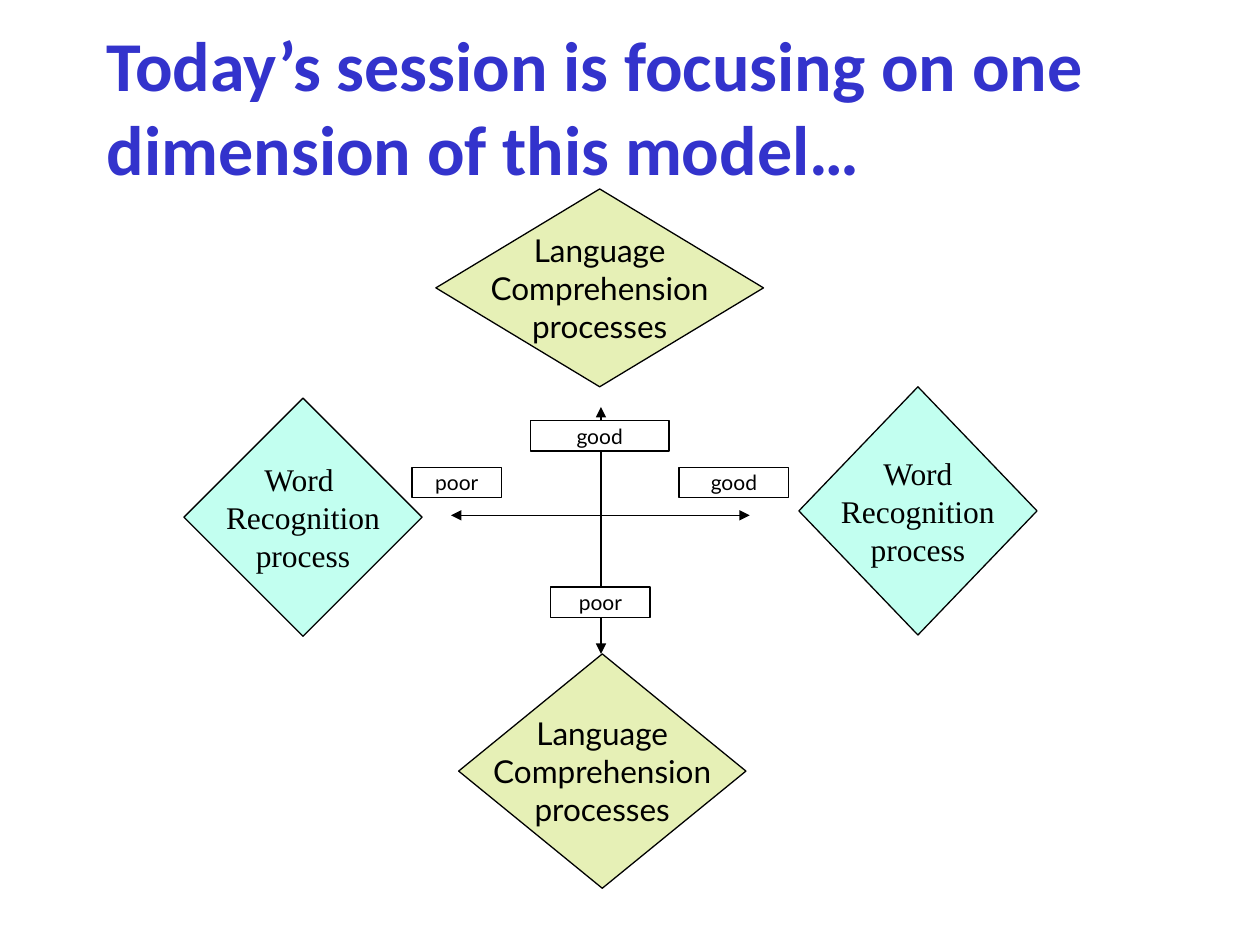
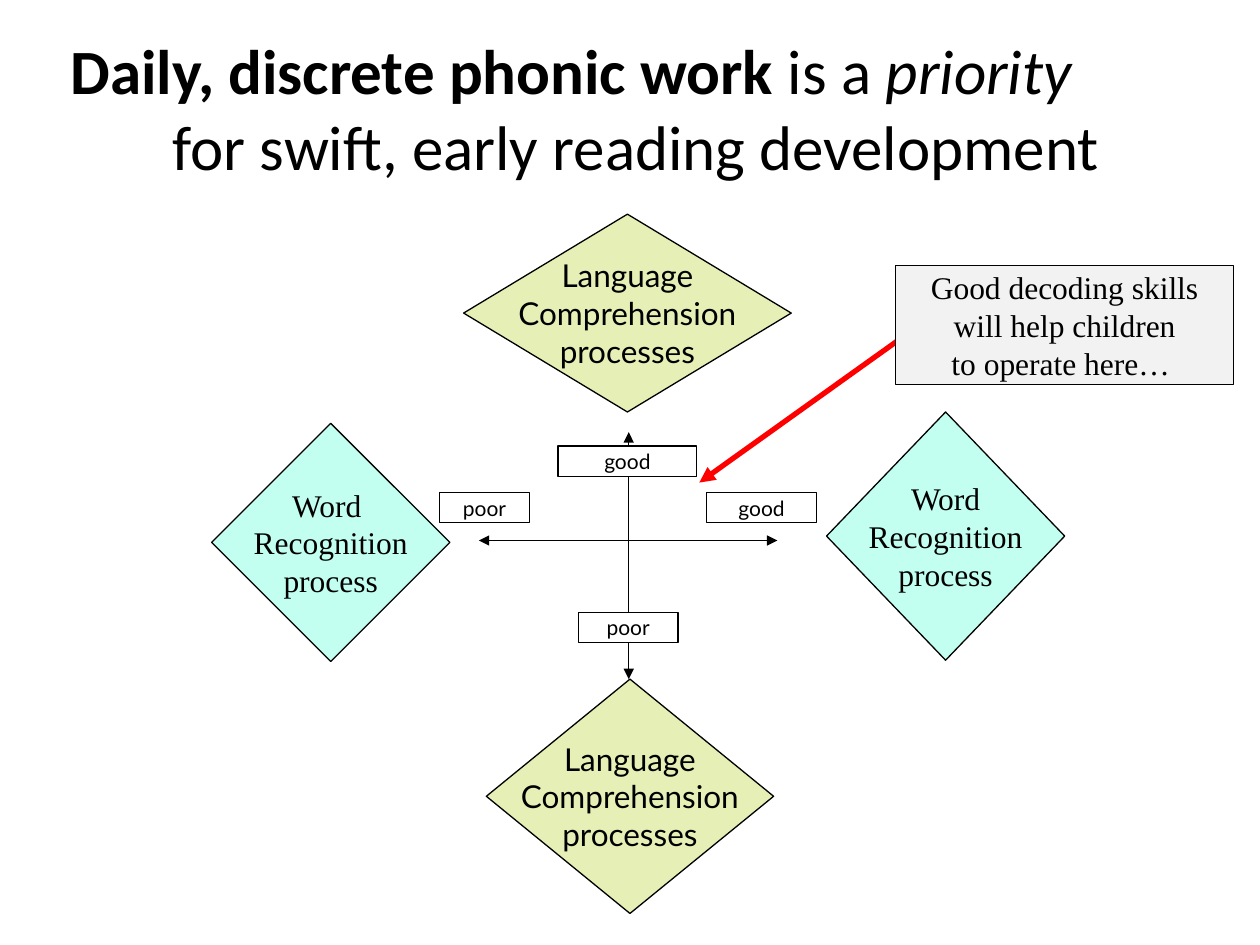
from lxml import etree
from pptx import Presentation
from pptx.dml.color import RGBColor
from pptx.enum.shapes import MSO_CONNECTOR, MSO_SHAPE
from pptx.enum.text import MSO_ANCHOR, PP_ALIGN
from pptx.oxml.ns import qn
from pptx.util import Inches, Pt

BLACK = RGBColor(0x00, 0x00, 0x00)
WHITE = RGBColor(0xFF, 0xFF, 0xFF)
BLUE = RGBColor(0x33, 0x33, 0xCC)
RED = RGBColor(0xFF, 0x00, 0x00)
GREY = RGBColor(0xF2, 0xF2, 0xF2)
LIME = RGBColor(0xE6, 0xF0, 0xB6)
AQUA = RGBColor(0xC2, 0xFF, 0xF0)

TITLE_FONT, LANGUAGE_FONT, WORD_FONT = "Calibri", "Lato", "Times New Roman"

LANGUAGE = ["Language", "Comprehension", "processes"]
WORD = ["Word", "Recognition", "process"]
WORD_LEFT = ["Word ", "Recognition", "process"]

DIAMONDS = [
    (LANGUAGE, LANGUAGE_FONT, LIME, (3.46, 1.5, 2.6, 1.57)),
    (LANGUAGE, LANGUAGE_FONT, LIME, (3.64, 5.19, 2.28, 1.86)),
    (WORD, WORD_FONT, AQUA, (6.34, 3.07, 1.89, 1.97)),
    (WORD_LEFT, WORD_FONT, AQUA, (1.46, 3.16, 1.89, 1.89)),
]
AXES = [((4.77, 3.23), (4.77, 5.19)), ((3.58, 4.09), (5.95, 4.09))]
LABELS = [
    ("good", None, (5.39, 3.71, 0.87, 0.24)),
    ("poor", None, (3.27, 3.71, 0.71, 0.24)),
    ("good", WHITE, (4.21, 3.34, 1.1, 0.24)),
    ("poor", WHITE, (4.37, 4.66, 0.79, 0.24)),
]

FOCUS_TITLE = [[("Today’s session is focusing on one dimension of this model…", "b")]]
PHONICS_TITLE = [
    [("Daily, discrete phonic work ", "b"), ("is a ", ""), ("priority", "i")],
    [("for swift, early reading development", "")],
]
CALLOUT = ["Good decoding skills", "will help children", "to operate here… "]
MODEL_SHIFT = (0.22, 0.2)


def style_run(r, font, size, color, style=""):
    r.font.name, r.font.size, r.font.color.rgb = font, Pt(size), color
    r.font.bold, r.font.italic = "b" in style, "i" in style


def write(sp, lines, font, size, color=BLACK):
    tf = sp.text_frame
    tf.word_wrap = False
    tf.vertical_anchor = MSO_ANCHOR.MIDDLE
    for i, line in enumerate(lines):
        p = tf.paragraphs[0] if i == 0 else tf.add_paragraph()
        p.alignment = PP_ALIGN.CENTER
        r = p.add_run()
        r.text = line
        style_run(r, font, size, color)


def add_title(s, lines, box, size, color=BLACK, margin=0, first_indent=0):
    tf = s.shapes.add_textbox(*map(Inches, box)).text_frame
    tf.word_wrap = True
    tf.vertical_anchor = MSO_ANCHOR.MIDDLE
    p = tf.paragraphs[0]
    p.alignment = PP_ALIGN.LEFT
    pPr = p._p.get_or_add_pPr()
    pPr.set("marL", str(Inches(margin)))
    pPr.set("indent", str(Inches(first_indent)))
    for i, line in enumerate(lines):
        if i:
            p.add_line_break()
        for text, style in line:
            r = p.add_run()
            r.text = text
            style_run(r, TITLE_FONT, size, color, style)


def add_box(s, kind, box, fill, lines, font, size):
    sp = s.shapes.add_shape(kind, *map(Inches, box))
    sp.shadow.inherit = False
    if fill is None:
        sp.fill.background()
    else:
        sp.fill.solid()
        sp.fill.fore_color.rgb = fill
    sp.line.color.rgb = BLACK
    sp.line.width = Pt(0.75)
    write(sp, lines, font, size)


def add_arrow(s, start, end, color=BLACK, width=0.75, ends=("headEnd", "tailEnd")):
    line = s.shapes.add_connector(MSO_CONNECTOR.STRAIGHT, *map(Inches, start + end))
    line.line.color.rgb = color
    line.line.width = Pt(width)
    ln = line.line._get_or_add_ln()
    for end_tag in ends:
        etree.SubElement(ln, qn("a:" + end_tag), type="triangle")
    etree.SubElement(line._element.spPr, qn("a:effectLst"))


def add_model(s, dx=0, dy=0):
    def moved(place):
        return (place[0] + dx, place[1] + dy) + place[2:]

    for lines, font, fill, box in DIAMONDS:
        add_box(s, MSO_SHAPE.FLOWCHART_DECISION, moved(box), fill, lines, font, 18)
    for start, end in AXES:
        add_arrow(s, moved(start), moved(end))
    for text, fill, box in LABELS:
        add_box(s, MSO_SHAPE.RECTANGLE, moved(box), fill, [text], LANGUAGE_FONT, 12)


def main():
    prs = Presentation()
    prs.slide_width, prs.slide_height = Inches(10), Inches(7.5)
    blank = prs.slide_layouts[6]

    s = prs.slides.add_slide(blank)
    add_title(s, FOCUS_TITLE, (0.75, 0.25, 8.5, 1.17), 40, BLUE)
    add_model(s)

    s = prs.slides.add_slide(blank)
    add_title(s, PHONICS_TITLE, (0.2, 0, 9.58, 1.7), 36, margin=1.07, first_indent=-0.81)
    add_arrow(s, (7.2, 2.65), (5.55, 3.83), RED, 3, ends=("tailEnd",))
    add_box(s, MSO_SHAPE.RECTANGLE, (7.11, 2.11, 2.68, 0.94), GREY, CALLOUT, WORD_FONT, 18)
    add_model(s, *MODEL_SHIFT)

    prs.save("out.pptx")


if __name__ == "__main__":
    main()
